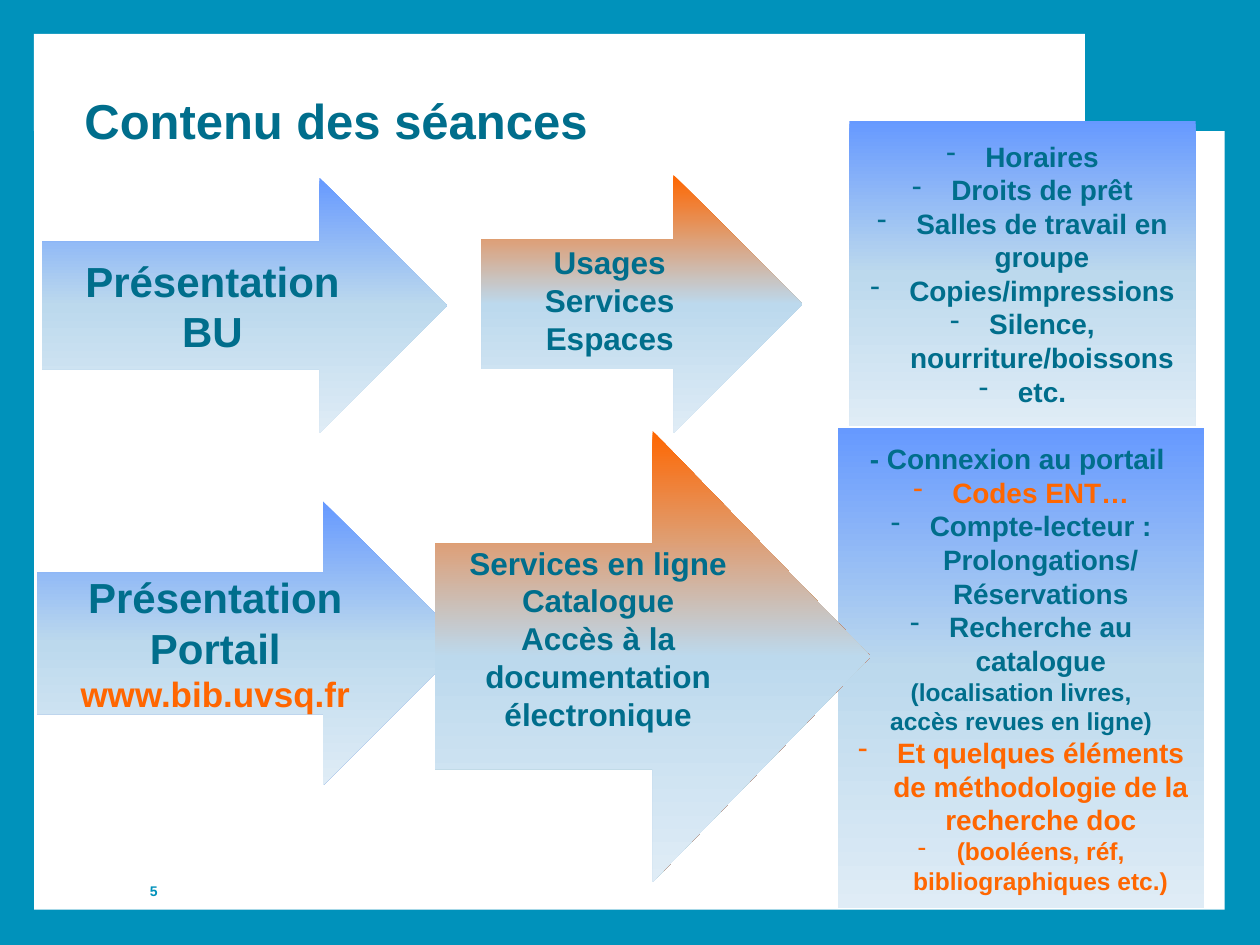
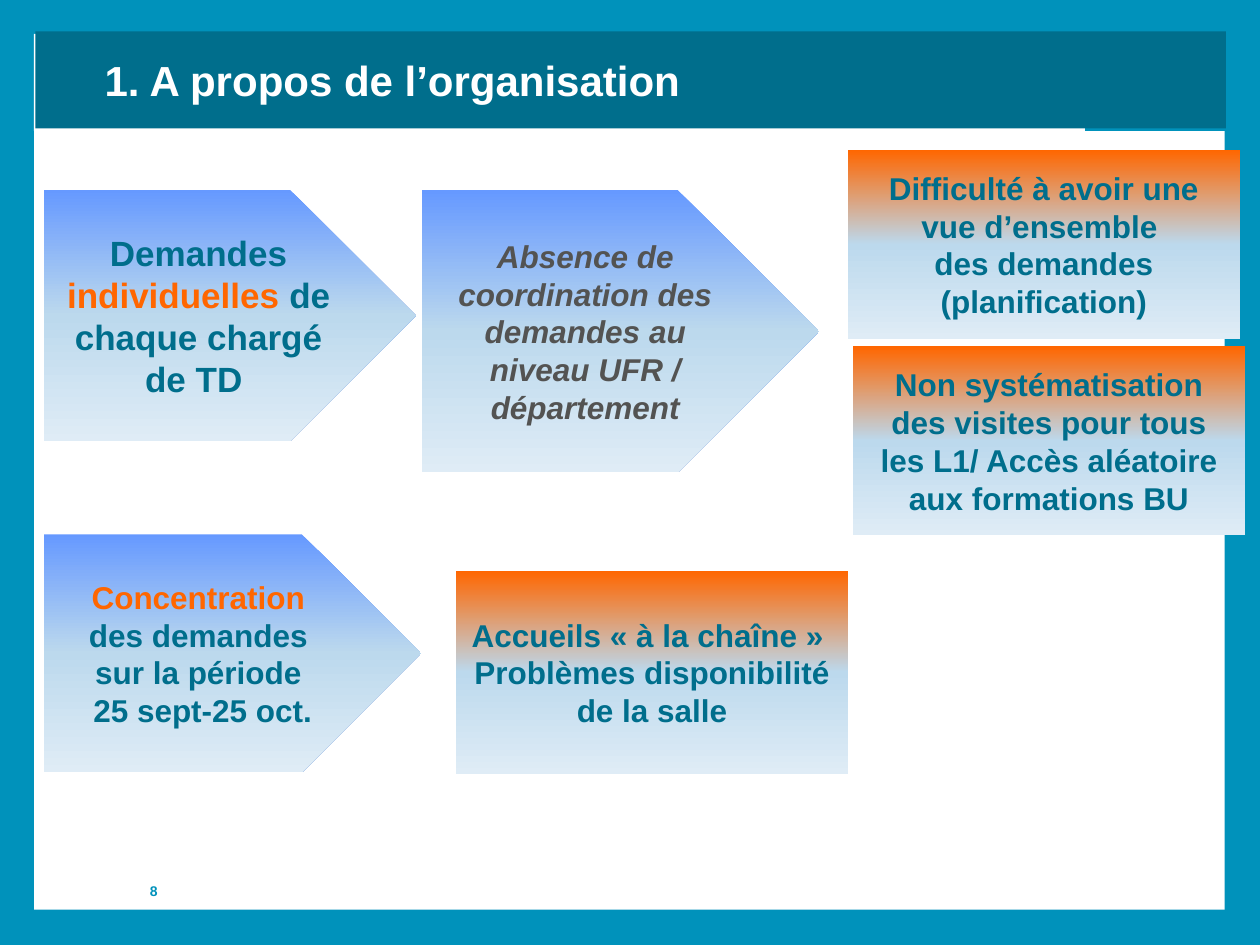
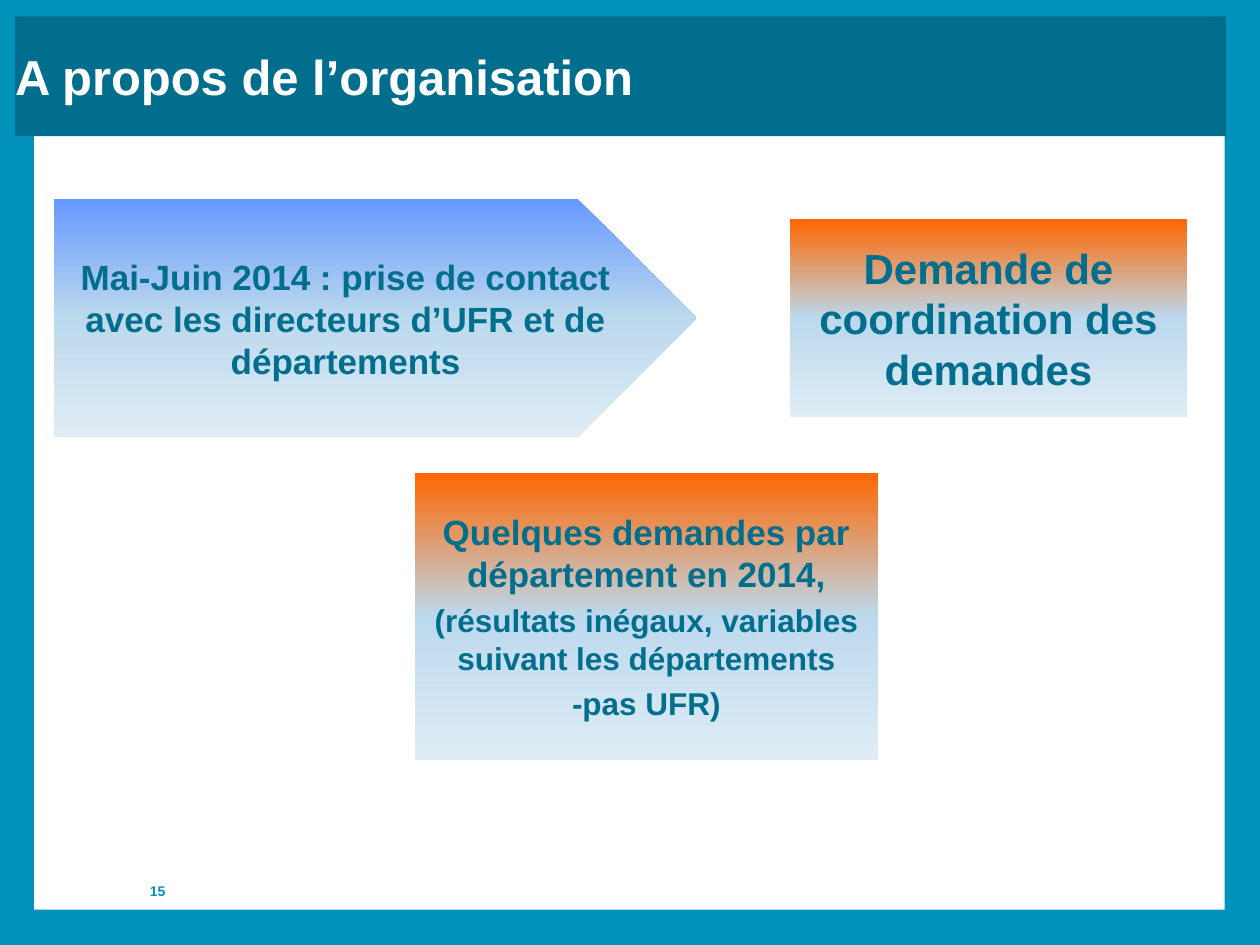
from copy import deepcopy
from dataclasses import dataclass

from lxml import etree
from pptx import Presentation
from pptx.dml.color import RGBColor
from pptx.enum.shapes import MSO_SHAPE
from pptx.enum.text import MSO_ANCHOR, PP_ALIGN
from pptx.oxml.ns import qn
from pptx.util import Inches, Pt

RECTANGLE = MSO_SHAPE.RECTANGLE
ARROW = MSO_SHAPE.RIGHT_ARROW
PENTAGON = MSO_SHAPE.PENTAGON
LEFT = PP_ALIGN.LEFT
CENTER = PP_ALIGN.CENTER
MIDDLE = MSO_ANCHOR.MIDDLE

FONT = "Arial"
COLORS = {
    "frame": "0092BB",
    "teal": "006E8C",
    "white": "FFFFFF",
    "blue": "6699FF",
    "orange": "FF6600",
    "sky": "BCD9ED",
    "mist": "DFECF6",
    "gray": "535352",
}
WIDTH, HEIGHT = Inches(10), Inches(7.5)
COLUMN, ROW = WIDTH / 100, HEIGHT / 75
BULLET_INDENT = Inches(0.31)
NO_INSETS = (0, 0, 0, 0)


@dataclass(frozen=True)
class Piece:
    text: str
    size: int
    color: str = "teal"
    italic: bool = False


@dataclass(frozen=True)
class Line:
    pieces: tuple[Piece, ...]
    bullet: bool = False
    space_before: int = 0


@dataclass(frozen=True)
class Area:
    column: float
    row: float
    columns: float
    rows: float


@dataclass(frozen=True)
class Block:
    preset: int
    area: Area
    fill: str
    lines: list[Line]
    insets: tuple[float, float, float, float] = (1, 0.5, 1, 0.5)


@dataclass(frozen=True)
class Title:
    text: str
    size: int
    area: Area
    band: bool = True
    indent: float = 0


@dataclass(frozen=True)
class Page:
    number: int
    title: Title
    blocks: list[Block]
    has_tab: bool = True


def line(text: str, size: int, color: str = "teal", bullet: bool = False,
         space_before: int = 0, italic: bool = False) -> Line:
    return Line((Piece(text, size, color, italic),), bullet, space_before)


def lines(size: int, *texts: str) -> list[Line]:
    return [line(text, size) for text in texts]


def bullets(size: int, *texts: str, color: str = "teal") -> list[Line]:
    return [line(text, size, color, bullet=True) for text in texts]


def rgb(name: str) -> RGBColor:
    return RGBColor.from_string(COLORS[name])


def position(area: Area) -> tuple[int, int, int, int]:
    return (round(area.column * COLUMN), round(area.row * ROW),
            round(area.columns * COLUMN), round(area.rows * ROW))


def add_plain(slide, preset: int, area: Area):
    shape = slide.shapes.add_shape(preset, *position(area))
    shape.shadow.inherit = False
    shape.line.fill.background()
    return shape


def add_solid(slide, area: Area, color: str):
    shape = add_plain(slide, RECTANGLE, area)
    shape.fill.solid()
    shape.fill.fore_color.rgb = rgb(color)
    return shape


def fill_gradient(shape, top: str) -> None:
    shape.fill.gradient()
    shape.fill.gradient_angle = 270
    stop_list = shape._element.spPr.find(qn("a:gradFill")).find(qn("a:gsLst"))
    stop_list.append(deepcopy(stop_list[0]))
    names = (top, "sky", "mist")
    for index, (stop, name) in enumerate(zip(shape.fill.gradient_stops, names)):
        stop.position = index / 2
        stop.color.rgb = rgb(name)


def add_bullet(paragraph) -> None:
    properties = paragraph._p.get_or_add_pPr()
    properties.set("marL", str(BULLET_INDENT))
    properties.set("indent", str(-BULLET_INDENT))
    etree.SubElement(properties, qn("a:buFontTx"))
    etree.SubElement(properties, qn("a:buChar")).set("char", "-")


def write(shape, content: list[Line], insets: tuple[float, float, float, float],
          alignment: int) -> None:
    frame = shape.text_frame
    frame.word_wrap = True
    frame.vertical_anchor = MIDDLE
    left, top, right, bottom = insets
    frame.margin_left, frame.margin_right = round(left * COLUMN), round(right * COLUMN)
    frame.margin_top, frame.margin_bottom = round(top * ROW), round(bottom * ROW)
    frame.text = "\n".join(entry.pieces[0].text for entry in content)
    for paragraph, entry in zip(frame.paragraphs, content):
        paragraph.alignment = alignment
        if entry.space_before:
            paragraph.space_before = Pt(entry.space_before)
        if entry.bullet:
            add_bullet(paragraph)
        for piece in entry.pieces[1:]:
            paragraph.add_run().text = piece.text
        for run, piece in zip(paragraph.runs, entry.pieces):
            run.font.name = FONT
            run.font.size = Pt(piece.size)
            run.font.bold = True
            run.font.italic = piece.italic
            run.font.color.rgb = rgb(piece.color)


def add_frame(slide, page: Page) -> None:
    add_solid(slide, Area(0, 0, 100, 75), "frame")
    if page.has_tab:
        add_solid(slide, Area(2.7, 2.7, 83.4, 7.7), "white")
    add_solid(slide, Area(2.7, 10.4, 94.5, 61.8), "white")
    number = slide.shapes.add_textbox(*position(Area(11.9, 68.9, 2.7, 3.6)))
    write(number, [line(str(page.number), 8, "frame")], NO_INSETS, LEFT)


def add_title(slide, title: Title) -> None:
    if title.band:
        shape = add_solid(slide, title.area, "teal")
    else:
        shape = slide.shapes.add_textbox(*position(title.area))
    color = "white" if title.band else "teal"
    write(shape, [line(title.text, title.size, color)], (title.indent, 0, 0, 0), LEFT)


def add_block(slide, block: Block) -> None:
    shape = add_plain(slide, block.preset, block.area)
    fill_gradient(shape, block.fill)
    write(shape, block.lines, block.insets, CENTER)


PAGES = [
    Page(5, Title("Contenu des séances", 28, Area(6.7, 5.2, 89.8, 8.7), band=False), [
        Block(ARROW, Area(3.3, 14.1, 32.2, 20.3), "blue", lines(24, "Présentation BU")),
        Block(RECTANGLE, Area(67.4, 9.6, 27.5, 24.2), "blue", bullets(
            16, "Horaires", "Droits de prêt", "Salles de travail en groupe",
            "Copies/impressions", "Silence, nourriture/boissons", "etc.")),
        Block(ARROW, Area(2.9, 39.8, 34, 22.5), "blue", [
            line("Présentation", 24),
            Line((Piece("Portail ", 24), Piece("www.bib.uvsq.fr", 20, "orange")))]),
        Block(RECTANGLE, Area(66.5, 34, 29.1, 38.1), "blue", [
            line("- Connexion au portail ", 16),
            *bullets(16, "Codes ENT…", color="orange"),
            *bullets(16, "Compte-lecteur : Prolongations/ Réservations",
                     "Recherche au catalogue"),
            *lines(14, "(localisation livres,", "accès revues en ligne)"),
            *bullets(16, "Et quelques éléments de méthodologie de la recherche doc",
                     color="orange"),
            *bullets(14, "(booléens, réf, bibliographiques etc.)", color="orange")]),
        Block(ARROW, Area(34.5, 34.2, 34.6, 35.8), "orange", lines(
            18, "Services en ligne", "Catalogue", "Accès à la documentation électronique"),
            insets=(1, 0.5, 1, 3.4)),
        Block(ARROW, Area(38.2, 13.9, 25.5, 20.5), "orange",
              lines(18, "Usages", "Services", "Espaces"), insets=(1, 0.5, 1, 1.2)),
    ]),
    Page(8, Title("1. A propos de l’organisation", 24, Area(2.8, 2.5, 94.5, 7.7), indent=5.5), [
        Block(RECTANGLE, Area(67.3, 11.9, 31.1, 15), "orange", lines(
            18, "Difficulté à avoir une vue d’ensemble ", "des demandes (planification)")),
        Block(PENTAGON, Area(33.5, 15.1, 31.5, 22.4), "blue", [
            line("Absence de coordination des demandes au niveau UFR / département",
                 18, "gray", italic=True)]),
        Block(PENTAGON, Area(3.5, 15.1, 29.5, 19.9), "blue", [
            Line((Piece("Demandes ", 20), Piece("individuelles ", 20, "orange"),
                  Piece("de chaque chargé de TD ", 20)))]),
        Block(PENTAGON, Area(3.5, 42.4, 29.9, 18.9), "blue", [
            line("Concentration ", 18, "orange"),
            *lines(18, "des demandes ", "sur la période ", "25 sept-25 oct.")]),
        Block(RECTANGLE, Area(67.7, 27.5, 31.1, 15), "orange", lines(
            18, "Non systématisation des visites pour tous les L1/ Accès aléatoire",
            "aux formations BU")),
        Block(RECTANGLE, Area(36.2, 45.3, 31.1, 16.1), "orange", lines(
            18, "Accueils « à la chaîne » ", "Problèmes disponibilité de la salle")),
    ]),
    Page(15, Title("A propos de l’organisation", 28, Area(1.2, 1.3, 96.1, 9.5)), [
        Block(PENTAGON, Area(4.3, 15.8, 51, 18.9), "blue", lines(
            20, "Mai-Juin 2014 : prise de contact avec les directeurs d’UFR et de départements")),
        Block(RECTANGLE, Area(62.7, 17.4, 31.5, 15.7), "orange",
              lines(24, "Demande de coordination des demandes"), NO_INSETS),
        Block(RECTANGLE, Area(32.9, 37.5, 36.8, 22.8), "orange", [
            line("Quelques demandes par département en 2014,", 20),
            line("(résultats inégaux, variables suivant les départements", 18, space_before=4),
            line("-pas UFR)", 18, space_before=4)], NO_INSETS),
    ], has_tab=False),
]


def main() -> None:
    presentation = Presentation()
    presentation.slide_width, presentation.slide_height = WIDTH, HEIGHT
    for page in PAGES:
        slide = presentation.slides.add_slide(presentation.slide_layouts[6])
        add_frame(slide, page)
        add_title(slide, page.title)
        for block in page.blocks:
            add_block(slide, block)
    presentation.save("out.pptx")


if __name__ == "__main__":
    main()
